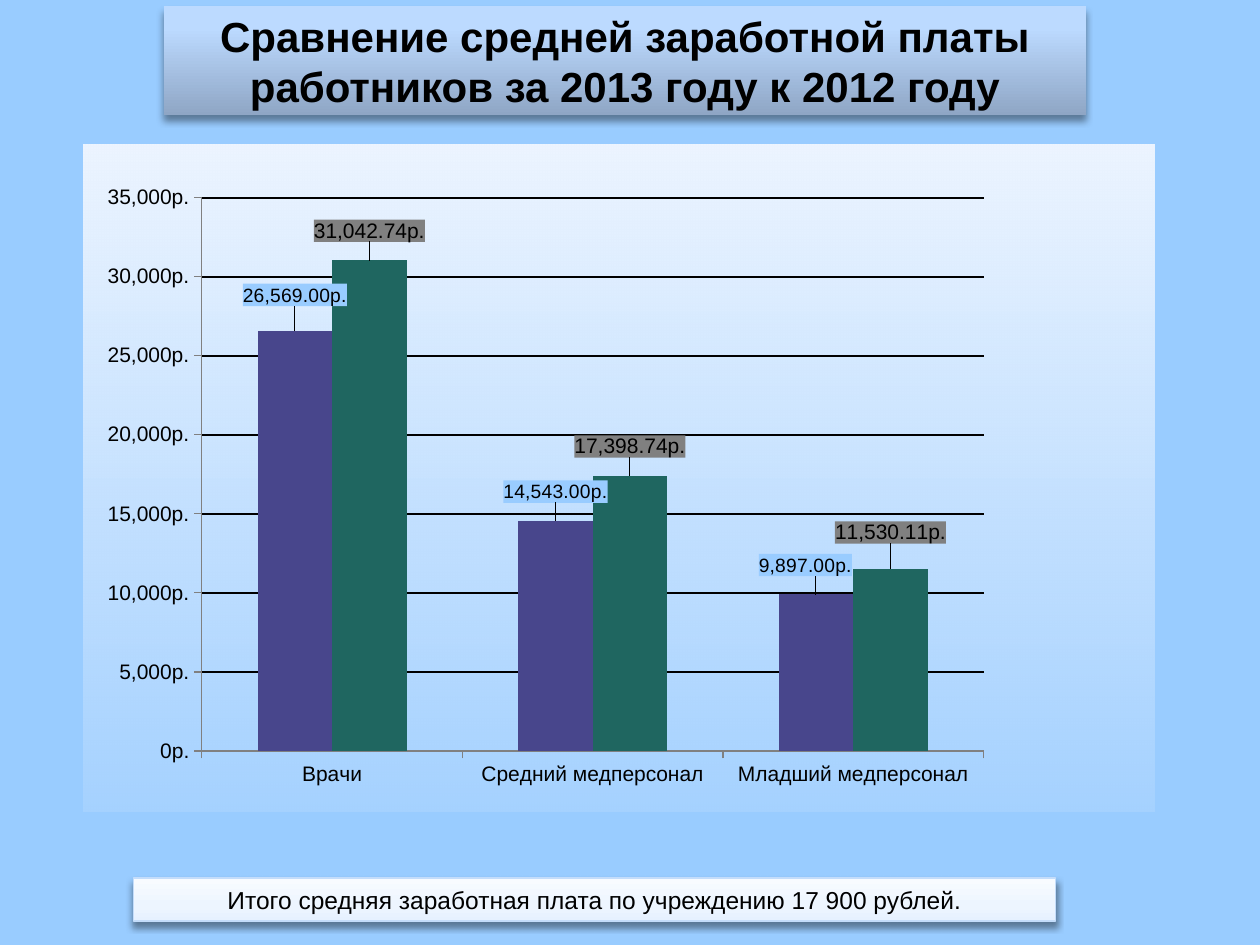
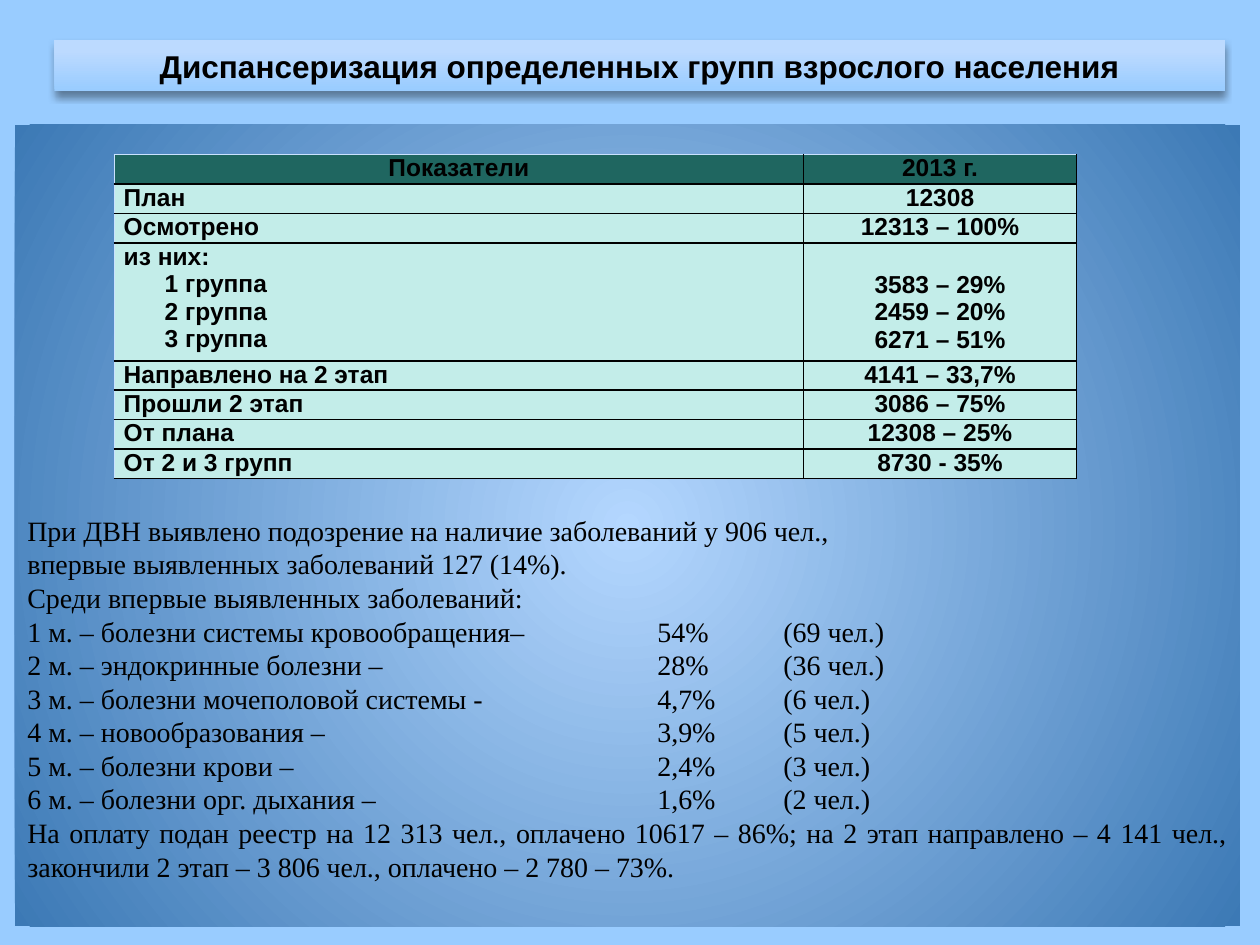
from copy import deepcopy

from lxml import etree
from pptx import Presentation
from pptx.chart.data import CategoryChartData
from pptx.dml.color import RGBColor
from pptx.enum import chart as ch, shapes, text
from pptx.oxml.ns import qn
from pptx.util import Pt

BLACK = RGBColor(0x00, 0x00, 0x00)
SKY = RGBColor(0x99, 0xCC, 0xFF)
PALE = RGBColor(0xBC, 0xDA, 0xFF)
PALE_END = RGBColor(0xBE, 0xDB, 0xFF)
STEEL = RGBColor(0x8F, 0xA6, 0xC5)
ICE = RGBColor(0xE6, 0xF1, 0xFF)
ICE_MID = RGBColor(0xED, 0xF5, 0xFF)
ICE_END = RGBColor(0xF8, 0xFB, 0xFF)
EDGE = RGBColor(0xC4, 0xDD, 0xFB)
GLOW = RGBColor(0xB4, 0xD7, 0xFF)
DEEP = RGBColor(0x3C, 0x79, 0xB5)
VIOLET = RGBColor(0x48, 0x46, 0x8C)
GREEN = RGBColor(0x1F, 0x66, 0x60)
MINT = RGBColor(0xC3, 0xED, 0xE9)
CELL_EDGE = RGBColor(0xCA, 0xE2, 0xFF)
GRAY = RGBColor(0x80, 0x80, 0x80)

CENTER, LEFT, JUSTIFY = text.PP_ALIGN.CENTER, text.PP_ALIGN.LEFT, text.PP_ALIGN.JUSTIFY
MIDDLE, TOP = text.MSO_ANCHOR.MIDDLE, text.MSO_ANCHOR.TOP

TITLE_FILL = [(0, STEEL), (80, PALE), (100, PALE_END)]
HEADER_FILL = [(0, SKY), (80, PALE), (100, PALE_END)]
NOTE_FILL = [(0, ICE), (35, ICE_MID), (100, ICE_END)]
CHART_FILL = [(0, ICE, 16), (100, ICE_MID)]
PANEL_FILL = [(0, GLOW), (100, DEEP)]

STAFF = ["Врачи", "Средний медперсонал", "Младший медперсонал"]
SALARIES = [
    ("2012", [26569, 14543, 9897], VIOLET, SKY, 11,
     [(0, -0.03), (0, -0.02), (-0.01, -0.02)]),
    ("2013", [31042.74, 17398.74, 11530.11], GREEN, GRAY, 12,
     [(0, -0.02), (0, -0.02), (0, -0.03)]),
]
SCREENING = [
    (["Показатели"], ["2013 г."]),
    (["План"], ["12308"]),
    (["Осмотрено"], ["12313 – 100%"]),
    (["из них:", "1 группа", "2 группа", "3 группа"],
     ["3583 – 29%", "2459 – 20%", "6271 – 51%"]),
    (["Направлено на 2 этап"], ["4141 – 33,7%"]),
    (["Прошли 2 этап"], ["3086 – 75%"]),
    (["От плана"], ["12308 – 25%"]),
    (["От 2 и 3 групп"], ["8730 - 35%"]),
]
FINDINGS = [
    "При ДВН выявлено подозрение на наличие заболеваний у 906 чел.,",
    "впервые выявленных заболеваний 127 (14%).",
    "Среди впервые выявленных заболеваний:",
    "1 м. – болезни системы кровообращения–\t54%\t(69 чел.)",
    "2 м. – эндокринные болезни –\t28%\t(36 чел.)",
    "3 м. – болезни мочеполовой системы -\t4,7%\t(6 чел.)",
    "4 м. – новообразования –\t3,9%\t(5 чел.)",
    "5 м. – болезни крови –\t2,4%\t(3 чел.)",
    "6 м. – болезни орг. дыхания –\t1,6%\t(2 чел.)",
    "На оплату подан реестр на 12 313 чел., оплачено 10617 – 86%; на 2 этап направлено – "
    "4 141 чел., закончили 2 этап – 3 806 чел., оплачено – 2 780 – 73%.",
]


def node(parent, tag, **attrs):
    """Append an XML child and return it."""
    return etree.SubElement(parent, qn(tag), {k: str(v) for k, v in attrs.items()})


def color(parent, rgb, alpha=100):
    """Append an RGB colour with its opacity in percent."""
    clr = node(parent, "a:srgbClr", val=rgb)
    if alpha < 100:
        node(clr, "a:alpha", val=alpha * 1000)


def gradient(parent, stops, radial=False):
    """Append a gradient that rises from the bottom or grows from the centre."""
    grad = node(parent, "a:gradFill", rotWithShape=1)
    stop_list = node(grad, "a:gsLst")
    for pos, *tint in stops:
        color(node(stop_list, "a:gs", pos=pos * 1000), *tint)
    if radial:
        way = node(grad, "a:path", path="circle")
        node(way, "a:fillToRect", l=50000, t=50000, r=50000, b=50000)
    else:
        node(grad, "a:lin", ang=270 * 60000, scaled=1)
    return grad


class Deck:
    """Holds the shared style and the current slide."""

    def __init__(self):
        """Start a 4:3 presentation."""
        self.prs = Presentation()
        self.prs.slide_width, self.prs.slide_height = Pt(720), Pt(540)

    def slide(self):
        """Add a blank slide on the sky background."""
        self.s = self.prs.slides.add_slide(self.prs.slide_layouts[6])
        self.s.background.fill.solid()
        self.s.background.fill.fore_color.rgb = SKY

    def fill_text(self, tf, lines, size, bold=False, align=CENTER, font="Arial",
                  spacing=None, tabs=()):
        """Put one paragraph per line into a text frame."""
        for i, line in enumerate(lines):
            p = tf.add_paragraph() if i else tf.paragraphs[0]
            p.alignment = align
            if spacing:
                p.line_spacing = Pt(spacing)
            if tabs:
                tab_list = node(p._p.get_or_add_pPr(), "a:tabLst")
                for pos in tabs:
                    node(tab_list, "a:tab", pos=Pt(pos), algn="l")
            r = p.add_run()
            r.text = line
            r.font.name, r.font.size, r.font.bold = font, Pt(size), bold
            r.font.color.rgb = BLACK

    def box(self, x, y, w, h, stops, lines, size, edge=None, radial=False, shadow=True,
            anchor=MIDDLE, inset=0, **style):
        """Draw a gradient rectangle with text."""
        sp = self.s.shapes.add_shape(shapes.MSO_SHAPE.RECTANGLE, Pt(x), Pt(y), Pt(w), Pt(h))
        sp.fill.background()
        props = sp._element.spPr
        props.replace(props.find(qn("a:noFill")), gradient(props, stops, radial))
        if edge is None:
            sp.line.fill.background()
        else:
            sp.line.color.rgb, sp.line.width = edge, Pt(0.75)
        sp.shadow.inherit = False
        if shadow:
            cast = node(props.find(qn("a:effectLst")), "a:outerShdw", blurRad=Pt(4),
                        dist=Pt(3), dir=90 * 60000, rotWithShape=0)
            color(cast, BLACK, 40)
        tf = sp.text_frame
        tf.word_wrap, tf.vertical_anchor = True, anchor
        tf.margin_top, tf.margin_bottom = Pt(inset), 0
        self.fill_text(tf, lines, size, **style)

    def layout(self, parent, index, **places):
        """Insert a manual chart layout at an index of its parent."""
        for old in parent.findall(qn("c:layout")):
            parent.remove(old)
        frame = node(parent, "c:layout")
        manual = node(frame, "c:manualLayout")
        for tag, val in places.items():
            node(manual, "c:" + tag, val=val)
        parent.insert(index, frame)

    def labels(self, series, fill, size, shifts):
        """Show filled value labels, each moved from its usual place."""
        dl = series.data_labels
        dl.show_value = True
        dl.number_format, dl.number_format_is_linked = '#,##0.00"р."', False
        dl.position = ch.XL_LABEL_POSITION.OUTSIDE_END
        dl.font.size, dl.font.name, dl.font.color.rgb = Pt(size), "Arial", BLACK
        root = dl._element
        for leader in root.findall(qn("c:showLeaderLines")):
            root.remove(leader)
        props = node(root, "c:spPr")
        color(node(props, "a:solidFill"), fill)
        root.find(qn("c:numFmt")).addnext(props)
        shared = list(root)
        for i, (dx, dy) in enumerate(shifts):
            label = node(root, "c:dLbl")
            node(label, "c:idx", val=i)
            label.extend(deepcopy(shared))
            self.layout(label, 1, x=dx, y=dy)
            root.insert(i, label)

    def columns(self, x, y, w, h, cats, rows):
        """Draw the clustered column chart."""
        data = CategoryChartData()
        data.categories = cats
        for name, vals, *_ in rows:
            data.add_series(name, vals)
        chart = self.s.shapes.add_chart(ch.XL_CHART_TYPE.COLUMN_CLUSTERED, Pt(x), Pt(y),
                                        Pt(w), Pt(h), data).chart
        chart.has_legend = chart.has_title = False
        chart.font.size, chart.font.name, chart.font.color.rgb = Pt(10), "Arial", BLACK
        plot = chart.plots[0]
        plot.gap_width, plot.overlap, plot.vary_by_categories = 150, 0, False
        for series, (_, _, fill, label_fill, size, shifts) in zip(plot.series, rows):
            series.format.fill.solid()
            series.format.fill.fore_color.rgb = fill
            self.labels(series, label_fill, size, shifts)
        val = chart.value_axis
        for axis in (val, chart.category_axis):
            axis.tick_labels.font.size = Pt(12)
            axis.major_tick_mark = ch.XL_TICK_MARK.OUTSIDE
            axis.format.line.color.rgb = GRAY
        val.minimum_scale, val.maximum_scale, val.major_unit = 0, 35000, 5000
        val.tick_labels.number_format = "#,##0[$р.-419]"
        val.tick_labels.number_format_is_linked = False
        val.major_gridlines.format.line.color.rgb = BLACK
        val.major_gridlines.format.line.width = Pt(1.25)
        space = chart._chartSpace
        self.layout(space.find(qn("c:chart")).find(qn("c:plotArea")), 0, layoutTarget="inner",
                    xMode="edge", yMode="edge", x=0.11, y=0.08, w=0.73, h=0.83)
        props = node(space, "c:spPr")
        gradient(props, CHART_FILL)
        node(node(props, "a:ln"), "a:noFill")
        space.find(qn("c:chart")).addnext(props)

    def borders(self, cell, **sides):
        """Set one-point cell borders by side."""
        props = cell._tc.get_or_add_tcPr()
        for i, side in enumerate("LRTB"):
            ln = node(props, "a:ln" + side, w=Pt(1))
            color(node(ln, "a:solidFill"), sides.get(side, BLACK))
            props.insert(i, ln)

    def table(self, x, y, widths, row_h, rows):
        """Draw the two-column indicator table."""
        line_h = 16
        heights = [row_h + (len(names) - 1) * 16.87 for names, _ in rows]
        table = self.s.shapes.add_table(len(rows), len(widths), Pt(x), Pt(y),
                                        Pt(sum(widths)), Pt(sum(heights))).table
        for col, w in zip(table.columns, widths):
            col.width = Pt(w)
        for i, (row, h) in enumerate(zip(rows, heights)):
            table.rows[i].height = Pt(h)
            for j, lines in enumerate(row):
                cell = table.cell(i, j)
                cell.fill.solid()
                cell.fill.fore_color.rgb = MINT if i else GREEN
                cell.margin_left = cell.margin_right = Pt(5.4)
                cell.margin_top = Pt((len(row[0]) - len(lines)) * line_h)
                cell.margin_bottom = 0
                cell.vertical_anchor = TOP
                self.fill_text(cell.text_frame, lines, 14, bold=True,
                               align=LEFT if i and not j else CENTER)
                if not j:
                    for p in cell.text_frame.paragraphs[1:]:
                        p._p.get_or_add_pPr().set("marL", str(Pt(23.4)))
                self.borders(cell, L=BLACK if j else CELL_EDGE, T=BLACK if i else CELL_EDGE)


def main():
    """Build both slides."""
    deck = Deck()
    deck.slide()
    deck.box(93.6, 3.6, 527, 62.4, TITLE_FILL,
             ["Сравнение средней заработной платы работников за 2013 году к 2012 году"],
             24, bold=True)
    deck.columns(48, 82.5, 612, 381, STAFF, SALARIES)
    deck.box(76.3, 501.8, 527, 24.5, NOTE_FILL,
             ["Итого средняя заработная плата по учреждению 17 900 рублей."], 14, edge=EDGE)

    deck.slide()
    deck.box(31, 23, 669, 29, HEADER_FILL,
             ["Диспансеризация определенных групп взрослого населения"], 18, bold=True)
    deck.box(8.6, 71.3, 700, 458, PANEL_FILL, FINDINGS, 16, radial=True, shadow=False,
             anchor=TOP, inset=222, align=JUSTIFY, font="Times New Roman", spacing=19.2,
             tabs=(360, 432))
    deck.table(65.3, 88.4, (393.8, 156.2), 16.8, SCREENING)
    deck.prs.save("out.pptx")


if __name__ == "__main__":
    main()
